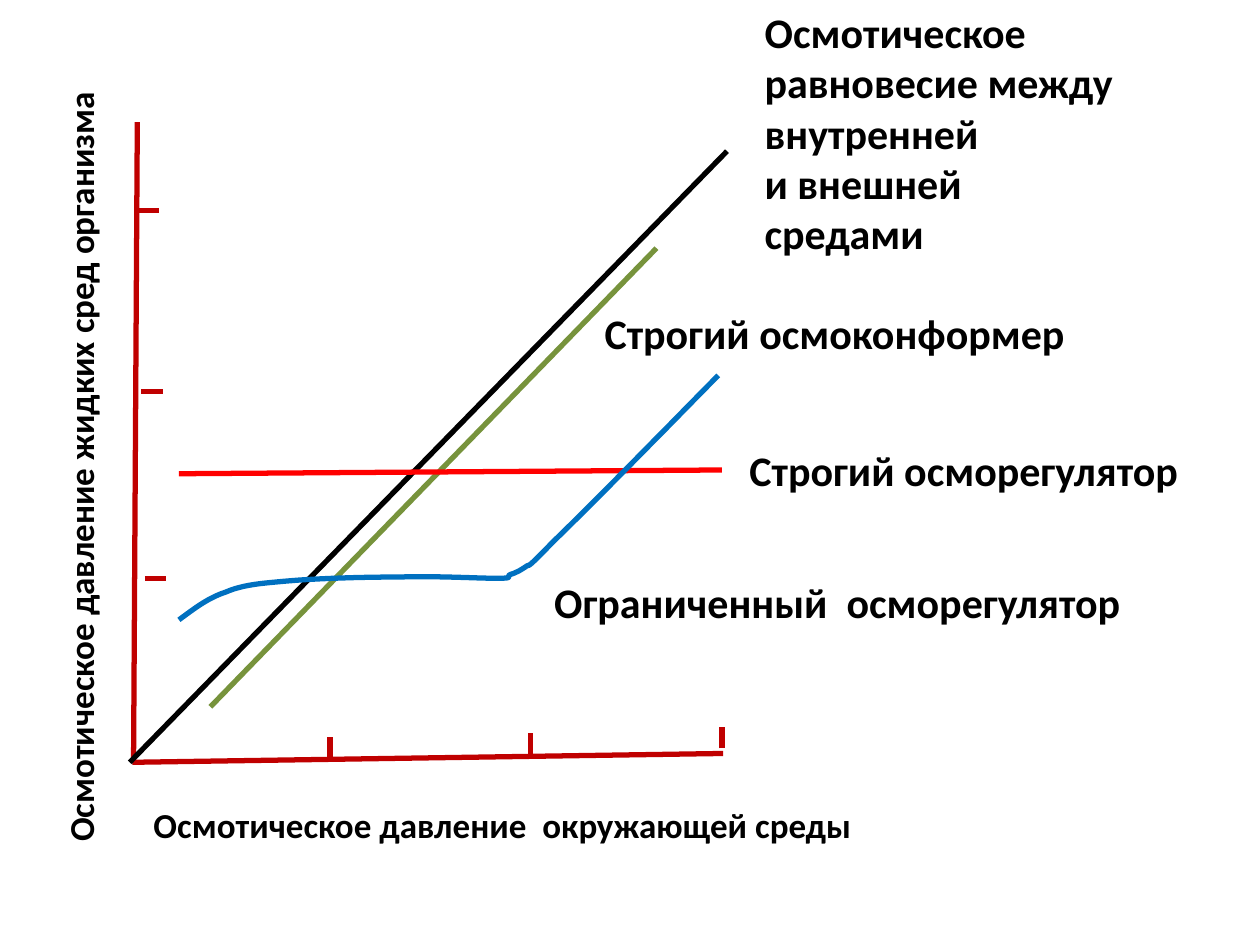
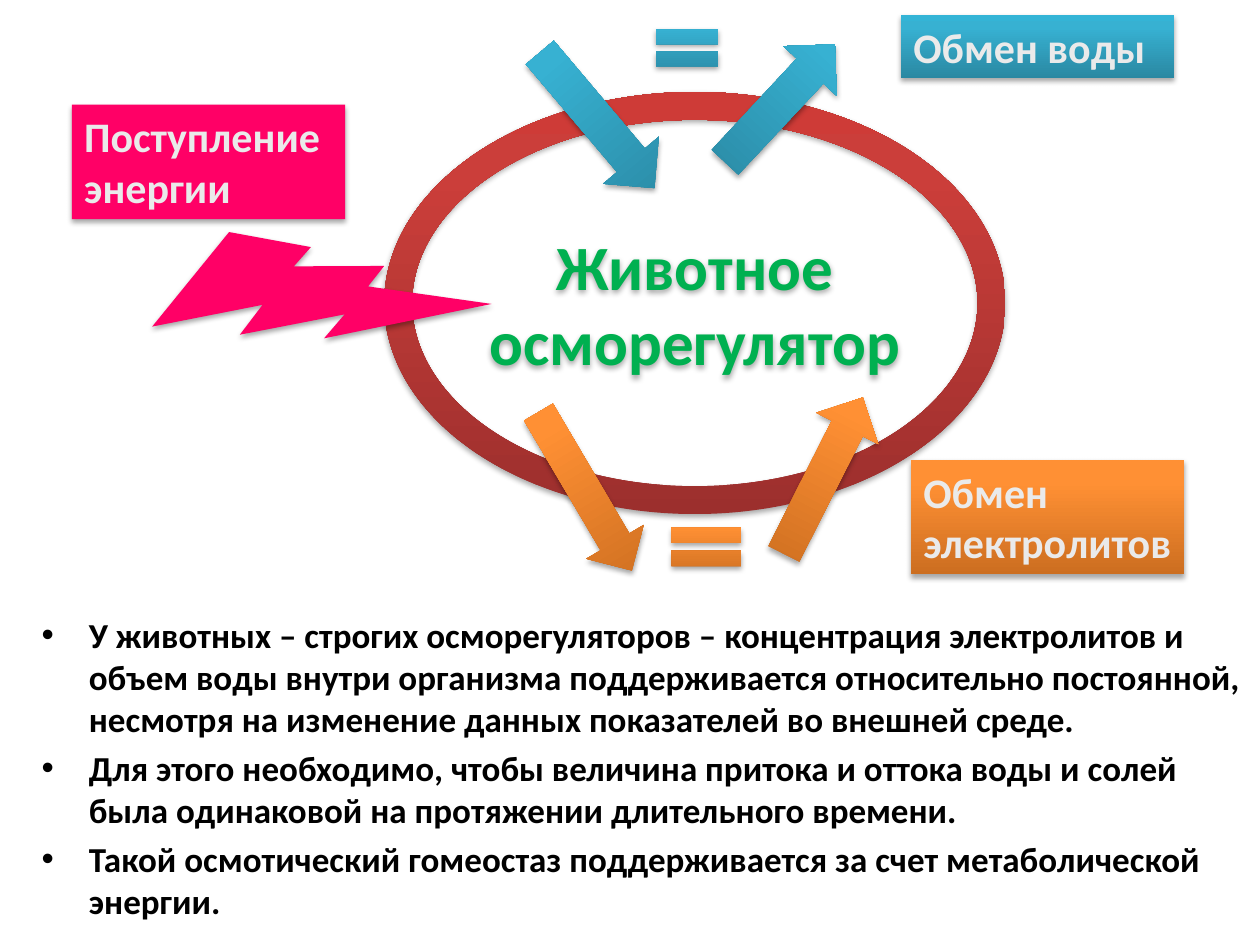
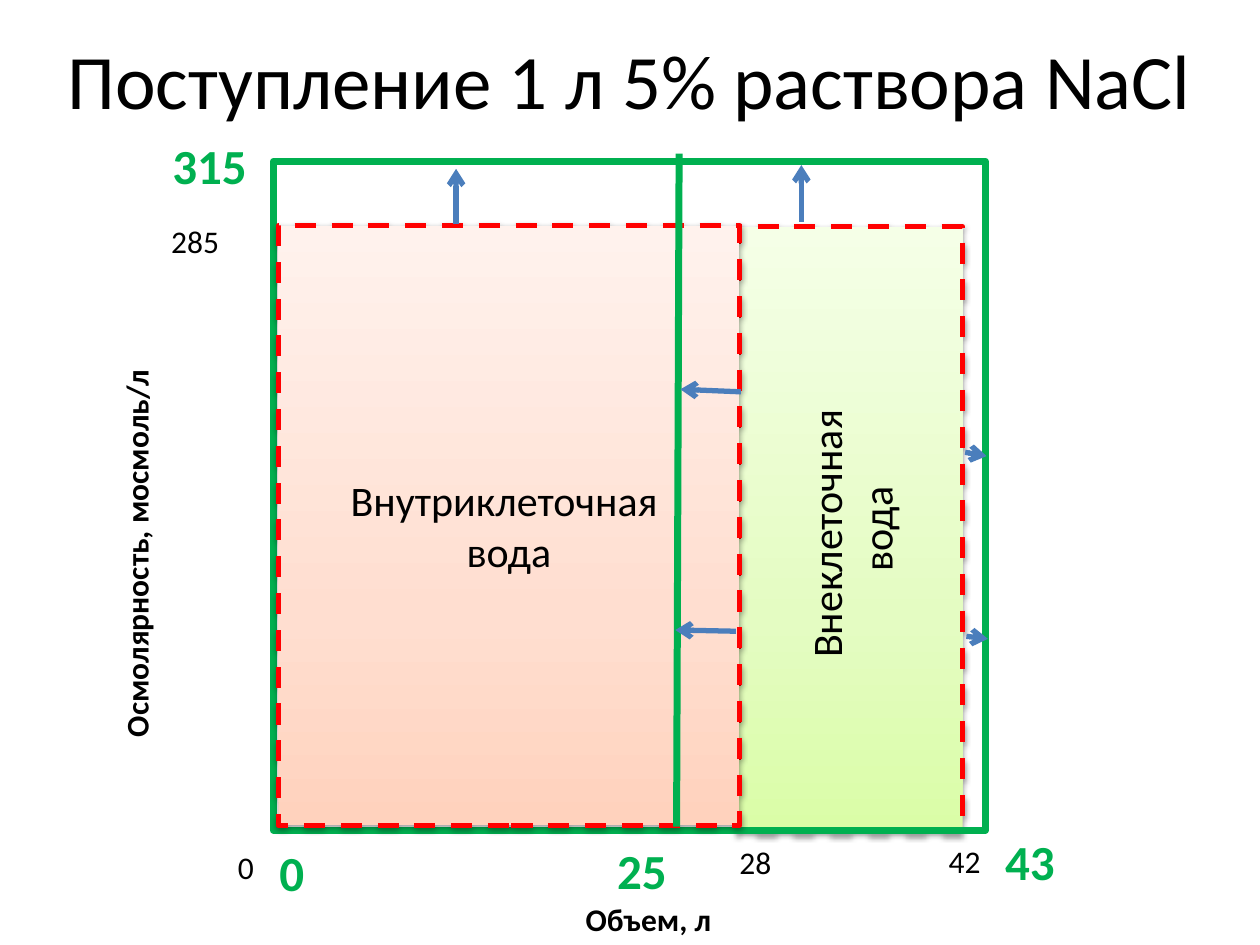
"""Build three slides on osmotic regulation in animals."""
import lxml.etree
import pptx
import pptx.dml.color
import pptx.enum.dml
import pptx.enum.shapes
import pptx.enum.text
import pptx.oxml.ns
import pptx.util

Inches = pptx.util.Inches
Pt = pptx.util.Pt
qn = pptx.oxml.ns.qn
SHAPE = pptx.enum.shapes.MSO_SHAPE
ALIGN = pptx.enum.text.PP_ALIGN
ANCHOR = pptx.enum.text.MSO_ANCHOR

FONT = "Calibri"
COLORS = {
    "text": "000000", "label": "EAEAEA", "axis": "C00000", "conformer": "77933C",
    "red": "FF0000", "limited": "0070C0", "green": "00B050", "energy": "FF0066",
    "arrow": "4B7EBC",
}
GRADIENTS = {
    "animal": ((0, "9C2F2D"), (80, "CB3E3A"), (100, "CE3B37")),
    "water": ((0, "2A88A2"), (80, "37B1D2"), (100, "34B4D6")),
    "salts": ((0, "CC6E20"), (80, "FF9034"), (100, "FF9136")),
    "outside": ((0, "DAFDA7"), (35, "E4FCC2"), (100, "F5FFE7")),
    "inside": ((0, "FFD2BD"), (35, "FFDED0"), (100, "FFF2ED")),
}


def rgb(name):
    return pptx.dml.color.RGBColor.from_string(COLORS[name])


def write(sp, text, size, color="text", bold=False, align=ALIGN.LEFT,
          anchor=ANCHOR.TOP, vertical=False, wrap=True, grow=False):
    tf = sp.text_frame
    tf.text = text
    tf.word_wrap = wrap
    tf.vertical_anchor = anchor
    if grow:
        tf.auto_size = pptx.enum.text.MSO_AUTO_SIZE.SHAPE_TO_FIT_TEXT
    if vertical:
        tf._txBody.bodyPr.set("vert", "vert270")
    for p in tf.paragraphs:
        p.alignment = align
        for r in p.runs:
            r.font.name = FONT
            r.font.size = Pt(size)
            r.font.bold = bold
            r.font.color.rgb = rgb(color)


def add_text(slide, box, text, size, **style):
    sp = slide.shapes.add_textbox(*map(Inches, box))
    write(sp, text, size, grow=True, **style)


def add_line(shapes, start, end, color, width=3, arrow=False):
    cx = shapes.add_connector(pptx.enum.shapes.MSO_CONNECTOR.STRAIGHT,
                              *map(Inches, start + end))
    cx.line.color.rgb = rgb(color)
    cx.line.width = Pt(width)
    spPr = cx._element.spPr
    lxml.etree.SubElement(spPr, qn("a:effectLst"))
    if arrow:
        lxml.etree.SubElement(spPr.find(qn("a:ln")), qn("a:tailEnd"), type="arrow")


def add_curve(slide, start, segments, color):
    points = []
    x0, y0 = start
    for x1, y1, x2, y2, x3, y3 in segments:
        for i in range(1, 13):
            t = i / 12
            weights = ((1 - t) ** 3, 3 * t * (1 - t) ** 2, 3 * t * t * (1 - t), t ** 3)
            points.append(tuple(
                Inches(sum(w * c for w, c in zip(weights, coords)))
                for coords in ((x0, x1, x2, x3), (y0, y1, y2, y3))))
        x0, y0 = x3, y3
    builder = slide.shapes.build_freeform(*map(Inches, start))
    builder.add_line_segments(points, close=False)
    sp = builder.convert_to_shape()
    sp.shadow.inherit = False
    sp.fill.background()
    sp.line.color.rgb = rgb(color)
    sp.line.width = Pt(3)


def fill_gradient(sp, name):
    sp.fill.gradient()
    sp.fill.gradient_angle = 90
    stops = sp._element.spPr.find(".//" + qn("a:gsLst"))
    for gs in list(stops):
        stops.remove(gs)
    for pos, color in GRADIENTS[name]:
        gs = lxml.etree.SubElement(stops, qn("a:gs"), pos=str(pos * 1000))
        lxml.etree.SubElement(gs, qn("a:srgbClr"), val=color)


def add_shadow(sp, alpha, distance):
    effects = sp._element.spPr.find(qn("a:effectLst"))
    shadow = lxml.etree.SubElement(
        effects, qn("a:outerShdw"), blurRad=str(Pt(3.1)), dist=str(Pt(distance)),
        dir="5400000", rotWithShape="0")
    color = lxml.etree.SubElement(shadow, qn("a:srgbClr"), val=COLORS["text"])
    lxml.etree.SubElement(color, qn("a:alpha"), val=str(alpha * 1000))


def add_solid(slide, kind, box, fill, rotation=0, alpha=35, distance=1.8):
    sp = slide.shapes.add_shape(kind, *map(Inches, box))
    sp.rotation = rotation
    sp.shadow.inherit = False
    sp.line.fill.background()
    if fill in GRADIENTS:
        fill_gradient(sp, fill)
    else:
        sp.fill.solid()
        sp.fill.fore_color.rgb = rgb(fill)
    add_shadow(sp, alpha, distance)
    return sp


def add_label(slide, box, text, fill):
    sp = add_solid(slide, SHAPE.RECTANGLE, box, fill)
    write(sp, text, 24, color="label", bold=True, grow=True)


def add_compartment(slide, box, text, fill, vertical=False):
    sp = add_solid(slide, SHAPE.RECTANGLE, box, fill, alpha=38, distance=1.6)
    sp.line.color.rgb = rgb("red")
    sp.line.width = Pt(3)
    sp.line.dash_style = pptx.enum.dml.MSO_LINE.DASH
    write(sp, text, 24, align=ALIGN.CENTER, anchor=ANCHOR.MIDDLE, vertical=vertical)


def place(sp, box):
    sp.left, sp.top, sp.width, sp.height = map(Inches, box)


def build_graph(prs):
    slide = prs.slides.add_slide(prs.slide_layouts[6])
    axes = slide.shapes.add_group_shape().shapes
    tick = 0.17
    add_line(axes, (1.09, 0.97), (1.06, 6.05), "axis")
    add_line(axes, (1.05, 6.05), (5.74, 5.98), "axis")
    for x, y in ((1.09, 1.67), (1.12, 3.11), (1.15, 4.59)):
        add_line(axes, (x, y), (x + tick, y), "axis")
    for x, y in ((2.62, 6.02), (4.21, 5.99), (5.73, 5.94)):
        add_line(axes, (x, y), (x, y - tick), "axis")
    add_text(slide, (0.42, 0.39, 0.54, 6.39),
             "Осмотическое давление жидких сред организма", 20, bold=True, vertical=True)
    add_text(slide, (1.12, 6.33, 6.27, 0.44),
             "Осмотическое давление  окружающей среды", 20, bold=True)
    add_line(slide.shapes, (1.03, 6.05), (5.77, 1.2), "text")
    add_line(slide.shapes, (1.67, 5.61), (5.21, 1.97), "conformer")
    add_line(slide.shapes, (1.42, 3.76), (5.73, 3.73), "red")
    add_curve(slide, (1.42, 4.92), (
        (1.53, 4.84, 1.64, 4.75, 1.79, 4.7),
        (1.93, 4.64, 2.07, 4.63, 2.3, 4.61),
        (2.53, 4.59, 2.89, 4.58, 3.17, 4.58),
        (3.44, 4.57, 3.79, 4.59, 3.94, 4.59),
        (4.09, 4.59, 4.01, 4.58, 4.05, 4.56),
        (4.08, 4.55, 4.11, 4.54, 4.17, 4.5),
        (4.22, 4.46, 4.14, 4.56, 4.39, 4.3),
        (4.65, 4.05, 5.17, 3.52, 5.7, 2.98),
    ), "limited")
    for box, text in (
        ((5.97, 0, 3.05, 2.12),
         "Осмотическое равновесие между внутренней\nи внешней средами"),
        ((4.7, 2.39, 4.03, 0.5), "Строгий осмоконформер"),
        ((5.85, 3.48, 3.64, 0.5), "Строгий осморегулятор"),
        ((4.3, 4.53, 4.82, 0.5), "Ограниченный  осморегулятор"),
    ):
        add_text(slide, box, text, 24, bold=True)


def build_exchange(prs):
    slide = prs.slides.add_slide(prs.slide_layouts[1])
    title = slide.shapes.title._element
    title.getparent().remove(title)
    body = slide.placeholders[1]
    place(body, (0.23, 4.82, 9.77, 2.68))
    write(body, "\n".join((
        "У животных – строгих осморегуляторов – концентрация электролитов и объем воды "
        "внутри организма поддерживается относительно постоянной, несмотря на изменение "
        "данных показателей во внешней среде.",
        "Для этого необходимо, чтобы величина притока и оттока воды и солей была "
        "одинаковой на протяжении длительного времени.",
        "Такой осмотический гомеостаз поддерживается за счет метаболической энергии.",
    )), 20, bold=True)
    animal = add_solid(slide, SHAPE.DONUT, (3.05, 0.73, 4.93, 3.35), "animal")
    animal.adjustments[0] = 0.066
    write(animal, "Животное осморегулятор", 36, color="green", bold=True,
          align=ALIGN.CENTER, anchor=ANCHOR.MIDDLE)
    for kind, box, fill, rotation in (
        (SHAPE.DOWN_ARROW, (4.45, 0.25, 0.58, 1.41), "water", 319.8),
        (SHAPE.DOWN_ARROW, (4.38, 3.17, 0.53, 1.46), "salts", 329.5),
        (SHAPE.UP_ARROW, (5.9, 0.18, 0.58, 1.28), "water", 43),
        (SHAPE.UP_ARROW, (6.26, 3.08, 0.55, 1.39), "salts", 26.8),
        (SHAPE.MATH_EQUAL, (5.12, 0.13, 0.67, 0.5), "water", 0),
        (SHAPE.LIGHTNING_BOLT, (1.3, 1.57, 2.35, 1.62), "energy", 326.7),
        (SHAPE.MATH_EQUAL, (5.23, 4.08, 0.75, 0.52), "salts", 0),
    ):
        add_solid(slide, kind, box, fill, rotation)
    add_label(slide, (0.57, 0.83, 2.17, 0.91), "Поступление энергии", "energy")
    add_label(slide, (7.15, 0.12, 2.17, 0.5), "Обмен воды", "water")
    add_label(slide, (7.23, 3.65, 2.17, 0.91), "Обмен электролитов", "salts")


def build_volumes(prs):
    slide = prs.slides.add_slide(prs.slide_layouts[5])
    title = slide.shapes.title
    place(title, (0, 0, 10, 1.25))
    write(title, "Поступление 1 л 5% раствора NaCl", 44,
          align=ALIGN.CENTER, anchor=ANCHOR.MIDDLE)
    add_compartment(slide, (5.86, 1.8, 1.78, 4.8), "Внеклеточная \nвода",
                    "outside", vertical=True)
    frame = slide.shapes.add_shape(SHAPE.RECTANGLE, *map(Inches, (2.17, 1.28, 5.65, 5.31)))
    frame.shadow.inherit = False
    frame.fill.background()
    frame.line.color.rgb = rgb("green")
    frame.line.width = Pt(4)
    add_text(slide, (4.55, 7.09, 1.33, 0.4), "Объем, л", 18, bold=True)
    add_text(slide, (0.88, 2.85, 0.5, 3.1), "Осмолярность, мосмоль/л", 18,
             bold=True, vertical=True, wrap=False)
    for box, text, wrap in (
        ((1.79, 6.68, 0.37, 0.4), "0", True),
        ((1.26, 1.71, 0.59, 0.4), "285", False),
        ((5.77, 6.64, 0.54, 0.4), "28", True),
        ((7.43, 6.63, 0.51, 0.4), "42", True),
    ):
        add_text(slide, box, text, 18, wrap=wrap)
    for box, text, wrap in (
        ((2.12, 6.64, 0.33, 0.57), "0", True),
        ((1.27, 1.03, 0.8, 0.57), "315", False),
        ((4.8, 6.62, 0.77, 0.57), "25", True),
        ((7.88, 6.55, 0.74, 0.57), "43", True),
    ):
        add_text(slide, box, text, 28, color="green", bold=True, wrap=wrap)
    add_compartment(slide, (2.21, 1.79, 3.66, 4.76), "Внутриклеточная \nвода", "inside")
    add_line(slide.shapes, (5.37, 6.56), (5.39, 1.22), "green", 4)
    for start, end in (
        ((3.62, 1.78), (3.62, 1.34)),
        ((6.36, 1.76), (6.36, 1.31)),
        ((5.88, 3.11), (5.4, 3.09)),
        ((5.84, 5.01), (5.36, 5)),
        ((7.67, 5.05), (7.84, 5.07)),
        ((7.66, 3.59), (7.83, 3.62)),
    ):
        add_line(slide.shapes, start, end, "arrow", arrow=True)


def main():
    prs = pptx.Presentation()
    prs.slide_width = Inches(10)
    prs.slide_height = Inches(7.5)
    build_graph(prs)
    build_exchange(prs)
    build_volumes(prs)
    prs.save("out.pptx")


if __name__ == "__main__":
    main()
